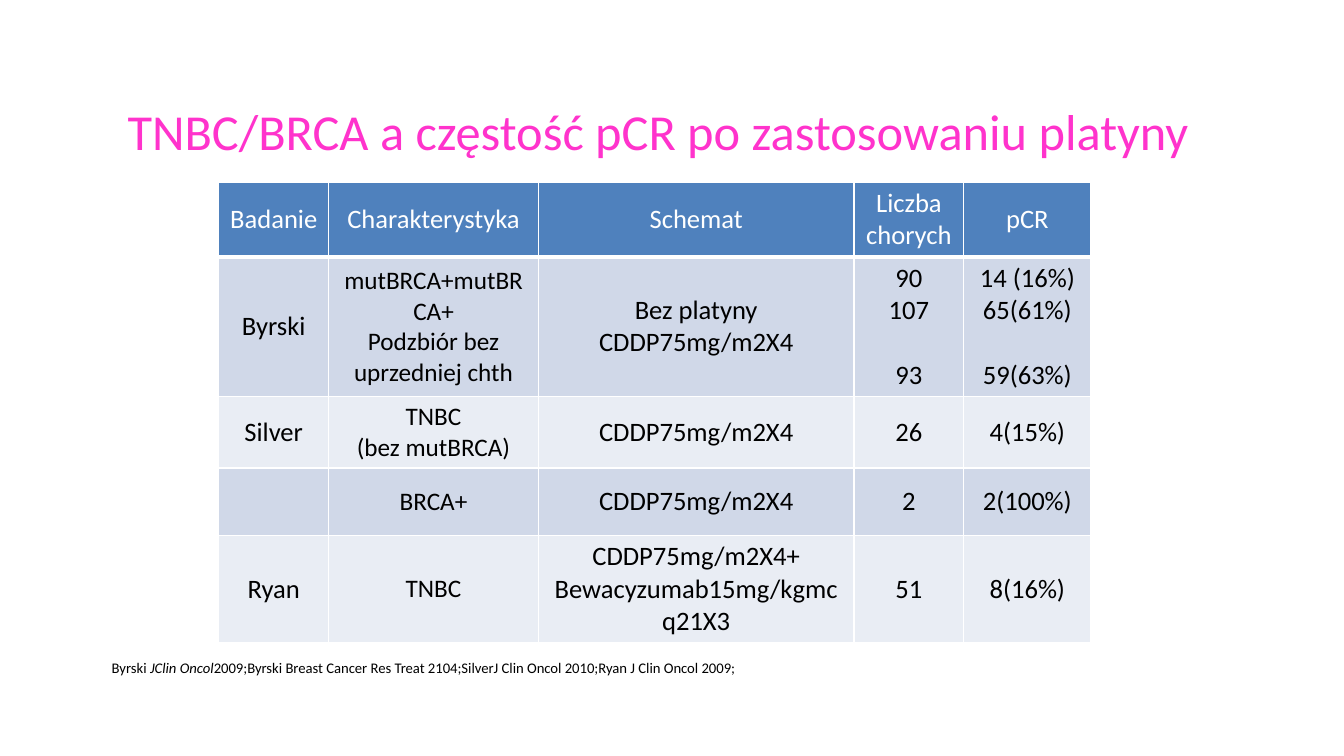
from dataclasses import dataclass

from lxml.etree import SubElement
from pptx import Presentation
from pptx.dml.color import RGBColor as RGB
from pptx.enum.text import MSO_ANCHOR as Anchor, MSO_AUTO_SIZE as AutoSize, PP_ALIGN as Align
from pptx.oxml.ns import qn
from pptx.util import Emu, Pt

PX = 9144  # one px is a hundredth of an inch


@dataclass(frozen=True)
class Theme:
    font: str = "Calibri"
    accent: str = "FF33CC"
    ink: str = "000000"
    paper: str = "FFFFFF"
    header: str = "4F81BD"
    bands: tuple = ("D0D8E8", "E9EDF4")
    title_size: float = 36
    cell_size: float = 19
    feature_size: float = 18
    source_size: float = 10.5
    empty_line: float = 23.2
    rule: float = 1
    header_rule: float = 3


def px(length):
    return Emu(length * PX)


def apply(target, formats):
    for name, value in formats.items():
        setattr(target, name, value)


class Slide:
    def __init__(self, deck, theme):
        self.theme = theme
        self.slide = deck.slides.add_slide(deck.slide_layouts[5])

    def style(self, font, size, color, italic=False):
        apply(font, {"name": self.theme.font, "size": Pt(size), "bold": False, "italic": italic})
        font.color.rgb = RGB.from_string(color)

    def title(self, text, box):
        heading = self.slide.shapes.title
        apply(heading, dict(zip(("left", "top", "width", "height"), map(px, box))))
        frame = heading.text_frame
        apply(frame, {
            "margin_left": px(13), "margin_right": px(13),
            "margin_top": px(7), "margin_bottom": px(7),
            "word_wrap": True, "auto_size": AutoSize.NONE, "vertical_anchor": Anchor.MIDDLE,
        })
        line = frame.paragraphs[0]
        line.alignment = Align.CENTER
        run = line.add_run()
        run.text = text
        self.style(run.font, self.theme.title_size, self.theme.accent)

    def borders(self, cell, bottom):
        properties = cell._tc.get_or_add_tcPr()
        rule = self.theme.rule
        for side, width in (("L", rule), ("R", rule), ("T", rule), ("B", bottom)):
            edge = SubElement(properties, qn(f"a:ln{side}"), w=str(Pt(width)))
            fill = SubElement(edge, qn("a:solidFill"))
            SubElement(fill, qn("a:srgbClr"), val=self.theme.paper)

    def cell(self, cell, lines, size, color, fill, bottom):
        self.borders(cell, bottom)
        cell.fill.solid()
        cell.fill.fore_color.rgb = RGB.from_string(fill)
        cell.vertical_anchor = Anchor.MIDDLE
        frame = cell.text_frame
        skipped = False
        for text in lines:
            if text is None:  # the next value sits one line lower
                skipped = True
                continue
            line = frame.paragraphs[0] if text is lines[0] else frame.add_paragraph()
            line.alignment = Align.CENTER
            if skipped:
                line.space_before = Pt(self.theme.empty_line)
                skipped = False
            run = line.add_run()
            run.text = text
            self.style(run.font, size, color)

    def table(self, rows, left, top, widths, heights, height):
        theme = self.theme
        holder = self.slide.shapes.add_table(
            len(rows), len(widths), px(left), px(top), px(sum(widths)), px(sum(heights)))
        grid = holder.table
        for column, width in zip(grid.columns, widths):
            column.width = px(width)
        for row, row_height in zip(grid.rows, heights):
            row.height = px(row_height)
        holder.height = px(height)
        for r, row in enumerate(rows):
            for c, lines in enumerate(row):
                if r == 0:
                    look = (theme.cell_size, theme.paper, theme.header, theme.header_rule)
                else:
                    size = theme.feature_size if c == 1 else theme.cell_size
                    look = (size, theme.ink, theme.bands[(r - 1) % 2], theme.rule)
                self.cell(grid.cell(r, c), lines, *look)

    def sources(self, parts, box):
        note = self.slide.shapes.add_textbox(*map(px, box))
        apply(note.text_frame, {"word_wrap": True, "auto_size": AutoSize.SHAPE_TO_FIT_TEXT})
        for text, italic in parts:
            run = note.text_frame.paragraphs[0].add_run()
            run.text = text
            self.style(run.font, self.theme.source_size, self.theme.ink, italic)


STUDIES = [
    [["Badanie"], ["Charakterystyka"], ["Schemat"], ["Liczba chorych"], ["pCR"]],
    [["Byrski"], ["mutBRCA+", "mutBRCA+", "Podzbiór bez uprzedniej chth"],
     ["Bez platyny", "CDDP75mg/m2X4"],
     ["90", "107", None, "93"], ["14 (16%)", "65(61%)", None, "59(63%)"]],
    [["Silver"], ["TNBC", "(bez mutBRCA)"], ["CDDP75mg/m2X4"], ["26"], ["4(15%)"]],
    [[], ["BRCA+"], ["CDDP75mg/m2X4"], ["2"], ["2(100%)"]],
    [["Ryan"], ["TNBC"], ["CDDP75mg/m2X4+", "Bewacyzumab15mg/kgmc q21X3"], ["51"], ["8(16%)"]],
]

SOURCES = [
    ("Byrski ", False),
    ("JClin Oncol", True),
    ("2009;Byrski Breast Cancer Res Treat 2104;SilverJ Clin Oncol 2010;"
     "Ryan J Clin Oncol 2009;", False),
]


def main():
    deck = Presentation()
    apply(deck, {"slide_width": px(1333), "slide_height": px(750)})
    page = Slide(deck, Theme())

    # Title
    page.title("TNBC/BRCA a częstość pCR po zastosowaniu platyny ", (101, 91, 1115, 77))

    # Response rates by study
    page.table(STUDIES, 217, 181, (109, 208, 313, 109, 126), (67, 106, 67, 67, 81), 452)

    # Literature
    page.sources(SOURCES, (101, 649, 807, 29))

    deck.save("out.pptx")


if __name__ == "__main__":
    main()
